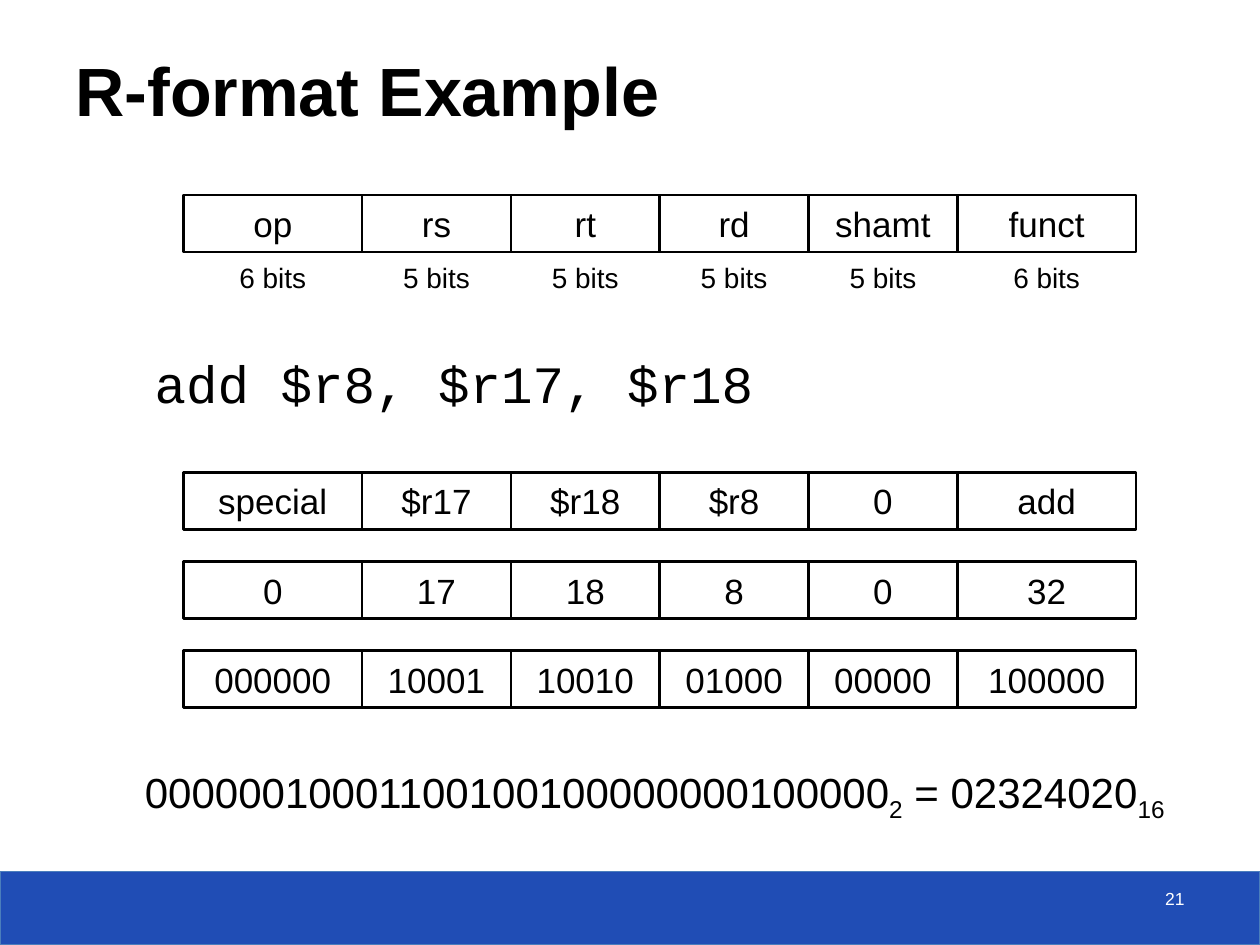
from dataclasses import dataclass

from pptx import Presentation
from pptx.dml.color import RGBColor
from pptx.enum.shapes import MSO_SHAPE
from pptx.enum.text import MSO_ANCHOR, PP_ALIGN
from pptx.util import Cm, Pt


@dataclass(frozen=True)
class Theme:
    ink: RGBColor = RGBColor(0x00, 0x00, 0x00)
    paper: RGBColor = RGBColor(0xFF, 0xFF, 0xFF)
    band: RGBColor = RGBColor(0x20, 0x4D, 0xB5)
    band_edge: RGBColor = RGBColor(0x4B, 0x7E, 0xBC)
    font: str = "Arial"
    code_font: str = "Courier New"
    title_size: int = 39
    code_size: int = 30
    result_size: int = 24
    cell_size: int = 20
    bits_size: int = 16
    number_size: int = 10


THEME = Theme()
SLIDE_WIDTH, SLIDE_HEIGHT = 25.4, 19.05
FIELD_BITS = (6, 5, 5, 5, 5, 6)
BIT_WIDTH = 0.6
CELL_HEIGHT = 1.15
FIELDS_LEFT = 3.7
ENCODINGS_TOP, ENCODING_PITCH = 9.52, 1.8
FIELD_NAMES = ("op", "rs", "rt", "rd", "shamt", "funct")
ENCODINGS = (
    ("special", "$r17", "$r18", "$r8", "0", "add"),
    ("0", "17", "18", "8", "0", "32"),
    ("000000", "10001", "10010", "01000", "00000", "100000"),
)


def add_run(paragraph, text, size, color=THEME.ink, name=THEME.font):
    run = paragraph.add_run()
    run.text = text
    run.font.size = Pt(size)
    run.font.name = name
    run.font.color.rgb = color
    return run


def add_text_box(slide, left, top, width, height, alignment=PP_ALIGN.LEFT):
    """Add a wrapping text box and return it with its first paragraph."""
    box = slide.shapes.add_textbox(Cm(left), Cm(top), Cm(width), Cm(height))
    box.text_frame.word_wrap = True
    paragraph = box.text_frame.paragraphs[0]
    paragraph.alignment = alignment
    return box, paragraph


def add_rectangle(slide, left, top, width, height, line_color, line_width):
    shape = slide.shapes.add_shape(
        MSO_SHAPE.RECTANGLE, Cm(left), Cm(top), Cm(width), Cm(height))
    shape.shadow.inherit = False
    shape.line.color.rgb = line_color
    shape.line.width = Pt(line_width)
    return shape


def add_title(slide, left, top, width, height):
    box, paragraph = add_text_box(slide, left, top, width, height)
    box.text_frame.vertical_anchor = MSO_ANCHOR.BOTTOM
    add_run(paragraph, "R-format Example", THEME.title_size).font.bold = True


def field_spans(left):
    """Yield the left edge and width of each field, in proportion to its bits."""
    for bits in FIELD_BITS:
        width = bits * BIT_WIDTH
        yield left, width
        left += width


def add_field_row(slide, left, top, values):
    for (cell_left, width), value in zip(field_spans(left), values):
        cell = add_rectangle(
            slide, cell_left, top, width, CELL_HEIGHT, THEME.ink, 1.5)
        cell.fill.background()
        cell.text_frame.vertical_anchor = MSO_ANCHOR.MIDDLE
        paragraph = cell.text_frame.paragraphs[0]
        paragraph.alignment = PP_ALIGN.CENTER
        add_run(paragraph, value, THEME.cell_size)


def add_bit_counts(slide, left, top, height):
    for (label_left, width), bits in zip(field_spans(left), FIELD_BITS):
        _, paragraph = add_text_box(
            slide, label_left, top, width, height, PP_ALIGN.CENTER)
        add_run(paragraph, f"{bits} bits", THEME.bits_size)


def add_instruction(slide, left, top, width, height):
    box, paragraph = add_text_box(slide, left, top, width, height)
    box.text_frame.margin_left = Cm(1.22)
    add_run(paragraph, "add $r8, $r17, $r18", THEME.code_size,
            name=THEME.code_font)


def add_result(slide, left, top, width, height):
    _, paragraph = add_text_box(
        slide, left, top, width, height, PP_ALIGN.CENTER)
    for number, base in (("00000010001100100100000000100000", "2"),
                         (" = 02324020", "16")):
        add_run(paragraph, number, THEME.result_size)
        subscript = add_run(paragraph, base, THEME.result_size)
        subscript.font._element.set("baseline", "-25000")


def add_footer(slide, left, top, width, height):
    band = add_rectangle(slide, left, top, width, height, THEME.band_edge, 0.75)
    band.fill.solid()
    band.fill.fore_color.rgb = THEME.band
    number_width = 5.92
    _, paragraph = add_text_box(
        slide, left + width - 1.27 - number_width, top + 0.2,
        number_width, 0.84, PP_ALIGN.RIGHT)
    add_run(paragraph, "21", THEME.number_size, THEME.paper)


def main():
    presentation = Presentation()
    presentation.slide_width = Cm(SLIDE_WIDTH)
    presentation.slide_height = Cm(SLIDE_HEIGHT)
    slide = presentation.slides.add_slide(presentation.slide_layouts[6])

    add_footer(slide, 0, 17.57, SLIDE_WIDTH, 1.48)
    add_title(slide, 1.27, 0.64, 23.6, 2.11)
    add_field_row(slide, FIELDS_LEFT, 3.93, FIELD_NAMES)
    add_bit_counts(slide, FIELDS_LEFT, 5.13, 0.94)
    add_instruction(slide, 1.9, 6.95, 23, 1.8)
    for index, values in enumerate(ENCODINGS):
        add_field_row(slide, FIELDS_LEFT,
                      ENCODINGS_TOP + index * ENCODING_PITCH, values)
    add_result(slide, 1.9, 15.32, 22.6, 1.4)

    presentation.save("out.pptx")


if __name__ == "__main__":
    main()
